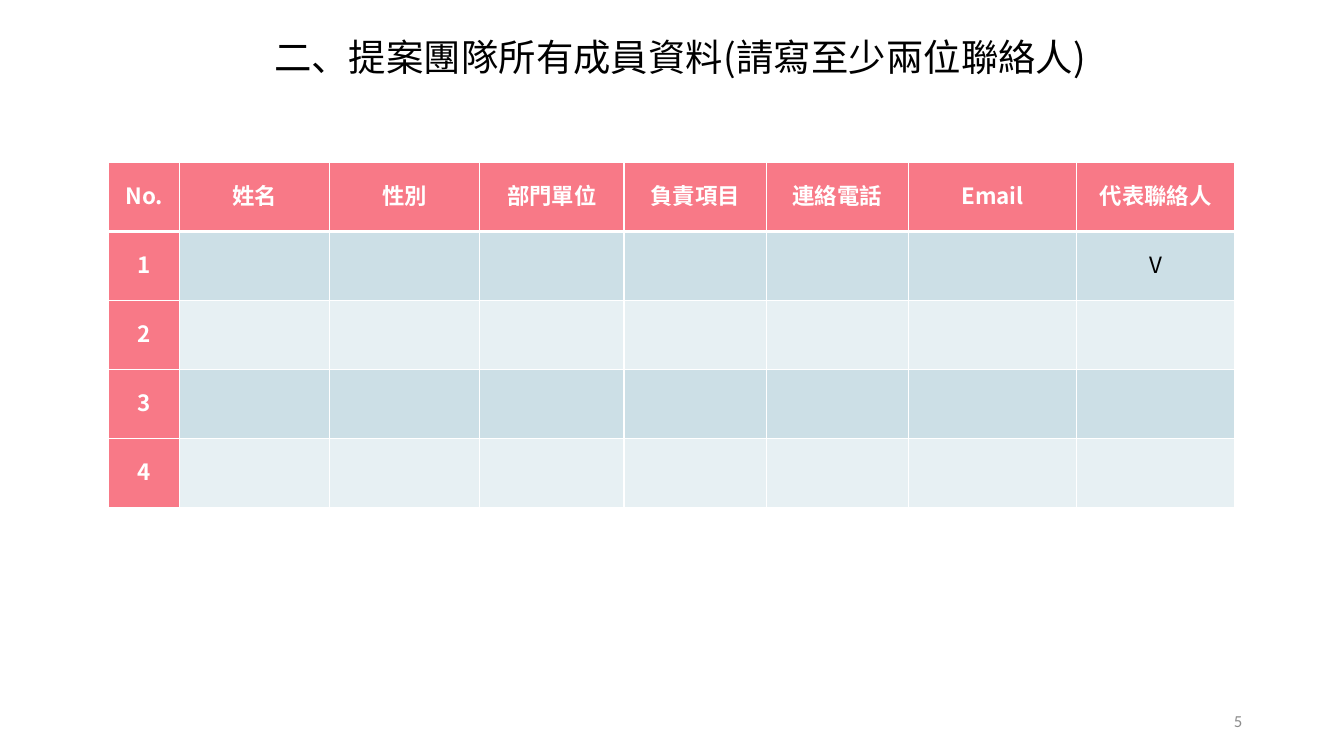
from lxml.etree import SubElement
from pptx import Presentation
from pptx.dml.color import RGBColor
from pptx.enum.text import MSO_ANCHOR, PP_ALIGN
from pptx.oxml.ns import qn
from pptx.util import Inches, Pt

COLORS = {
    "black": "000000",
    "white": "FFFFFF",
    "pink": "F87987",
    "blue": "CCDFE6",
    "pale": "E7F0F3",
    "gray": "8C8C8C",
}
CJK_FONT = "Noto Sans CJK SC"
HEADERS = ["No.", "姓名", "性別", "部門單位", "負責項目", "連絡電話", "Email", "代表聯絡人"]
COLUMN_WIDTHS = [0.7, 1.49, 1.49, 1.43, 1.41, 1.41, 1.67, 1.57]
MEMBER_COUNT = 4
TABLE_HEIGHT = 3.43
CELL_FORMAT = {
    "vertical_anchor": MSO_ANCHOR.MIDDLE,
    "margin_left": Inches(0.1),
    "margin_right": Inches(0.1),
    "margin_top": 0,
    "margin_bottom": 0,
}
CELL_PARAGRAPH_FORMAT = {
    "alignment": PP_ALIGN.CENTER,
    "line_spacing": Pt(20),
    "space_before": Pt(6),
    "space_after": Pt(6),
}


def apply_format(target, values):
    for name, value in values.items():
        setattr(target, name, value)


def write_text(paragraph, text, font_name, size, color, bold=False):
    run = paragraph.add_run()
    run.text = text
    apply_format(run.font, {"name": font_name, "size": Pt(size), "bold": bold})
    run.font.color.rgb = RGBColor.from_string(COLORS[color])
    east_asian = SubElement(run.font._element, qn("a:ea"))
    east_asian.set("typeface", font_name)


def add_text(slide, box, text, font_name, size, color,
             alignment=PP_ALIGN.LEFT, anchor=MSO_ANCHOR.TOP):
    shape = slide.shapes.add_textbox(*map(Inches, box))
    apply_format(shape.text_frame, {"word_wrap": True, "vertical_anchor": anchor})
    paragraph = shape.text_frame.paragraphs[0]
    paragraph.alignment = alignment
    write_text(paragraph, text, font_name, size, color)


def set_borders(cell, widths):
    properties = cell._tc.get_or_add_tcPr()
    for side, width in widths.items():
        line = SubElement(properties, qn(f"a:ln{side}"), w=str(Pt(width)))
        fill = SubElement(line, qn("a:solidFill"))
        SubElement(fill, qn("a:srgbClr"), val=COLORS["white"])


def format_cell(cell, row, column, text):
    is_heading = row == 0 or column == 0
    set_borders(cell, {"L": 1, "R": 1, "T": 3 if row == 1 else 1, "B": 3 if row == 0 else 1})
    fill_color = "pink" if is_heading else "blue" if row % 2 else "pale"
    cell.fill.solid()
    cell.fill.fore_color.rgb = RGBColor.from_string(COLORS[fill_color])
    apply_format(cell, CELL_FORMAT)
    paragraph = cell.text_frame.paragraphs[0]
    apply_format(paragraph, CELL_PARAGRAPH_FORMAT)
    if text:
        write_text(paragraph, text, CJK_FONT, 16, "white" if is_heading else "black", is_heading)


def add_member_table(slide):
    blanks = [""] * (len(HEADERS) - 2)
    rows = [HEADERS]
    for number in range(1, MEMBER_COUNT + 1):
        rows.append([str(number), *blanks, "V" if number == 1 else ""])
    frame = slide.shapes.add_table(
        len(rows), len(HEADERS), Inches(1.08), Inches(1.61),
        Inches(sum(COLUMN_WIDTHS)), Inches(TABLE_HEIGHT))
    table = frame.table
    table.first_column = True
    for column, width in zip(table.columns, COLUMN_WIDTHS):
        column.width = Inches(width)
    for row, texts in enumerate(rows):
        for column, text in enumerate(texts):
            format_cell(table.cell(row, column), row, column, text)


def main():
    presentation = Presentation()
    presentation.slide_width = Inches(13.33)
    presentation.slide_height = Inches(7.5)
    slide = presentation.slides.add_slide(presentation.slide_layouts[6])
    add_text(slide, (2.62, 0.29, 8.29, 0.55),
             "二、提案團隊所有成員資料(請寫至少兩位聯絡人)", CJK_FONT, 26.7, "black")
    add_member_table(slide)
    add_text(slide, (9.42, 6.95, 3, 0.4), "5", "Calibri", 12, "gray",
             PP_ALIGN.RIGHT, MSO_ANCHOR.MIDDLE)
    presentation.save("out.pptx")


if __name__ == "__main__":
    main()
